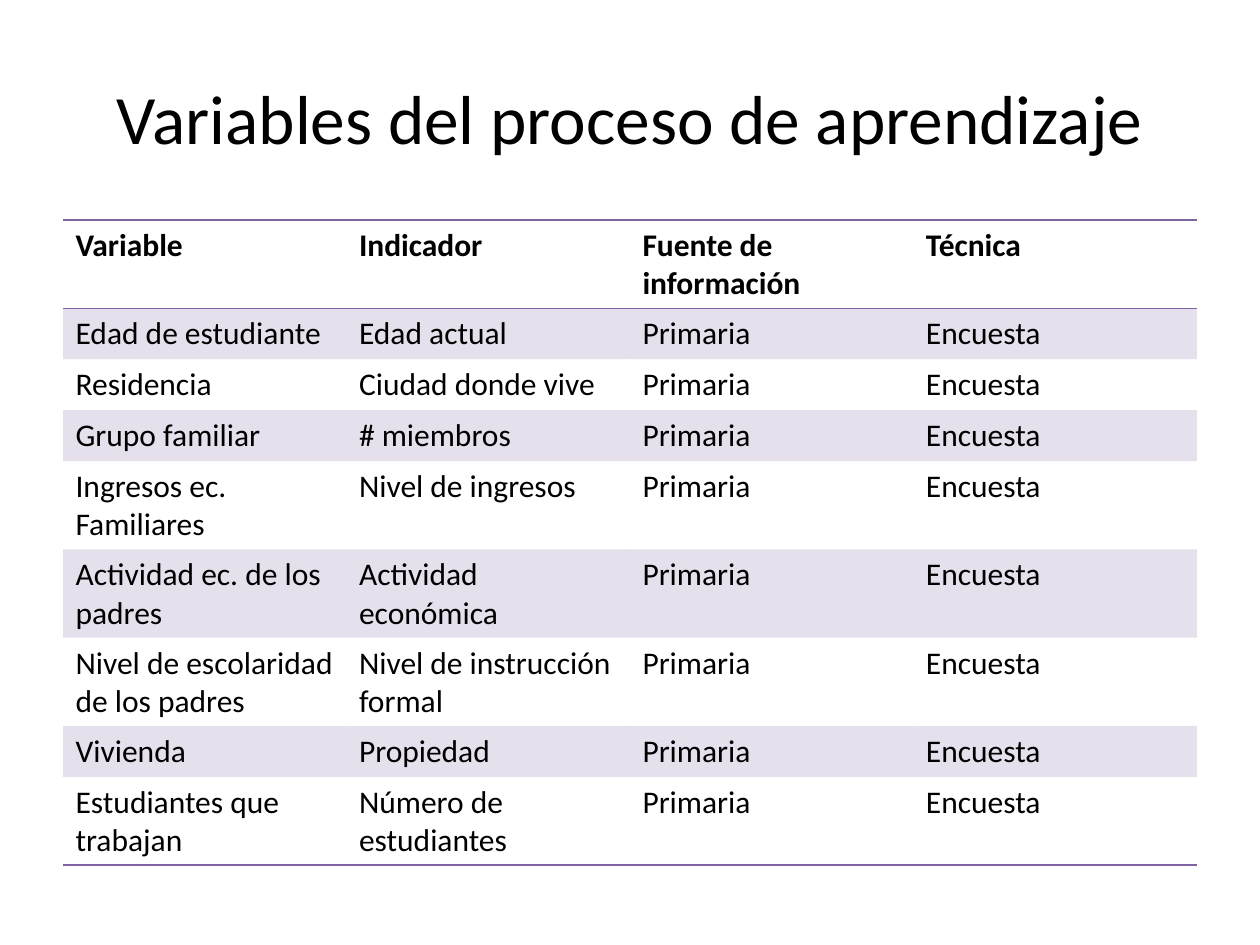
from lxml.etree import SubElement
from pptx import Presentation
from pptx.dml.color import RGBColor
from pptx.enum.text import MSO_ANCHOR, PP_ALIGN
from pptx.oxml import parse_xml
from pptx.oxml.ns import nsdecls, qn
from pptx.util import Emu, Pt

PX = 914400 // 126
FONT = "Calibri"
COLORS = {"text": "000000", "accent": "8064A2"}
NO_STYLE_NO_GRID = "{2D5ABB26-0587-4C30-8999-92F81FD0307C}"

TITLE = "Variables del proceso de aprendizaje"
HEADERS = ["Variable", "Indicador", "Fuente de información", "Técnica"]
SOURCE, TECHNIQUE = "Primaria", "Encuesta"
VARIABLES = [
    ("Edad de estudiante", "Edad actual"),
    ("Residencia", "Ciudad donde vive"),
    ("Grupo familiar", "# miembros"),
    ("Ingresos ec. Familiares", "Nivel de ingresos"),
    ("Actividad ec. de los padres", "Actividad económica"),
    ("Nivel de escolaridad de los padres", "Nivel de instrucción formal"),
    ("Vivienda", "Propiedad"),
    ("Estudiantes que trabajan", "Número de estudiantes"),
]

MARGIN, CONTENT_W = 63, 1134
TITLE_TOP, TITLE_H = 38, 157
TABLE_TOP, ROW_H = 220, 51


def px(*lengths):
    return [Emu(length * PX) for length in lengths]


def style_font(paragraph, size, bold=False):
    font = paragraph.font
    font.name, font.size, font.bold = FONT, Pt(size), bold
    font.color.rgb = RGBColor.from_string(COLORS["text"])


def add_title(slide):
    title = slide.shapes.add_textbox(*px(MARGIN, TITLE_TOP, CONTENT_W, TITLE_H))
    frame = title.text_frame
    frame.word_wrap = True
    frame.vertical_anchor = MSO_ANCHOR.MIDDLE
    heading = frame.paragraphs[0]
    heading.text = TITLE
    heading.alignment = PP_ALIGN.CENTER
    style_font(heading, 39.6)


def fill_band(cell):
    """Fill the cell with the accent colour at 20 % opacity."""
    cell.fill.solid()
    cell.fill.fore_color.rgb = RGBColor.from_string(COLORS["accent"])
    color = cell._tc.tcPr.find(qn("a:solidFill"))[0]
    SubElement(color, qn("a:alpha"), val="20000")


def add_borders(cell, sides):
    """Rule the given sides; borders must come before the fill."""
    for position, side in enumerate(sides):
        cell._tc.get_or_add_tcPr().insert(position, parse_xml(
            f'<a:ln{side} {nsdecls("a")} w="12700"><a:solidFill>'
            f'<a:srgbClr val="{COLORS["accent"]}"/></a:solidFill></a:ln{side}>'))


def add_variables_table(slide):
    rows = [HEADERS] + [(*pair, SOURCE, TECHNIQUE) for pair in VARIABLES]
    table = slide.shapes.add_table(
        len(rows), len(HEADERS),
        *px(MARGIN, TABLE_TOP, CONTENT_W, ROW_H * len(rows))).table
    table.horz_banding = False
    table._tbl.tblPr.find(qn("a:tableStyleId")).text = NO_STYLE_NO_GRID
    borders = {0: "TB", len(rows) - 1: "B"}
    for r, values in enumerate(rows):
        for c, value in enumerate(values):
            cell = table.cell(r, c)
            cell.text = value
            style_font(cell.text_frame.paragraphs[0], 18, bold=r == 0)
            if r % 2:
                fill_band(cell)
            else:
                cell.fill.background()
            add_borders(cell, borders.get(r, ""))


def main():
    presentation = Presentation()
    presentation.slide_width, presentation.slide_height = px(1260, 945)
    slide = presentation.slides.add_slide(presentation.slide_layouts[6])
    add_title(slide)
    add_variables_table(slide)
    presentation.save("out.pptx")


if __name__ == "__main__":
    main()
